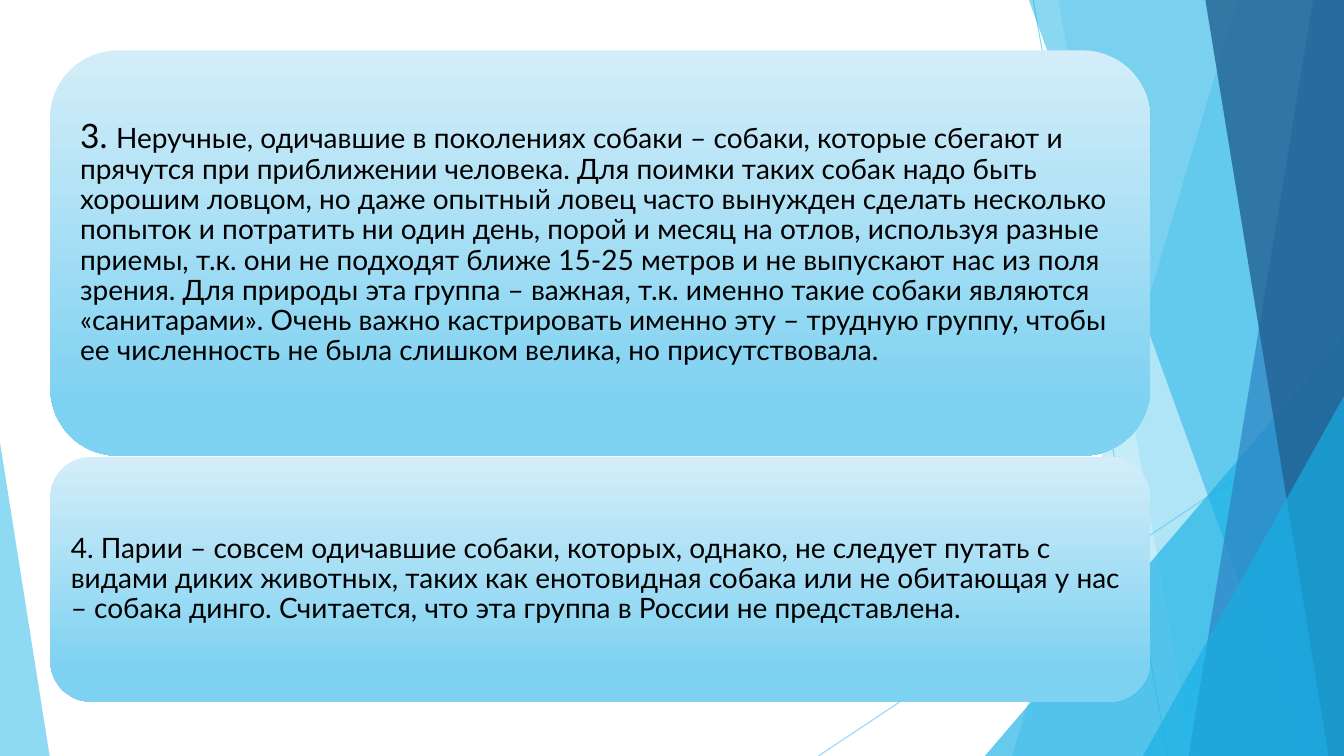
"""Build a slide with two gradient text cards over a faceted blue backdrop."""
import pptx
import pptx.dml.color
import pptx.enum.shapes
import pptx.enum.text
import pptx.oxml.ns
import pptx.oxml.xmlchemy
import pptx.util

Pt = pptx.util.Pt
RGB = pptx.dml.color.RGBColor
KIND = pptx.enum.shapes.MSO_SHAPE

SKY = RGB(0x5F, 0xCB, 0xEF)
CYAN = RGB(0x17, 0xB0, 0xE4)
BLUE = RGB(0x2E, 0x83, 0xC3)
NAVY = RGB(0x22, 0x62, 0x92)
PALE = RGB(0xD4, 0xEE, 0xF9)
SOFT = RGB(0x7D, 0xD1, 0xF1)
BLACK = RGB(0, 0, 0)
WIDE, HIGH = 960, 540

FERAL = (
    "Неручные, одичавшие в поколениях собаки – собаки, которые сбегают и "
    "прячутся при приближении человека. Для поимки таких собак надо быть "
    "хорошим ловцом, но даже опытный ловец часто вынужден сделать несколько "
    "попыток и потратить ни один день, порой и месяц на отлов, используя разные "
    "приемы, т.к. они не подходят ближе 15-25 метров и не выпускают нас из поля "
    "зрения. Для природы эта группа – важная, т.к. именно такие собаки являются "
    "«санитарами». Очень важно кастрировать именно эту – трудную группу, чтобы "
    "ее численность не была слишком велика, но присутствовала."
)
PARIAH = (
    "4. Парии – совсем одичавшие собаки, которых, однако, не следует путать с "
    "видами диких животных, таких как енотовидная собака или не обитающая у нас "
    "– собака динго. Считается, что эта группа в России не представлена."
)


class Deck:
    """Hold the style and the current slide."""

    font = "Lato"

    def __init__(self, slide):
        self.shapes = slide.shapes

    def fade(self, shape, alpha):
        """Set the opacity of a shape's colour in percent."""
        for color in shape.element.iter(pptx.oxml.ns.qn("a:srgbClr")):
            node = pptx.oxml.xmlchemy.OxmlElement("a:alpha")
            node.set("val", str(alpha * 1000))
            color.append(node)

    def paint(self, shape, color, alpha):
        """Fill a shape with a translucent colour and no outline."""
        shape.shadow.inherit = False
        shape.fill.solid()
        shape.fill.fore_color.rgb = color
        shape.line.fill.background()
        self.fade(shape, alpha)

    def line(self, x1, y1, x2, y2):
        """Draw a thin translucent line."""
        kind = pptx.enum.shapes.MSO_CONNECTOR.STRAIGHT
        line = self.shapes.add_connector(kind, Pt(x1), Pt(y1), Pt(x2), Pt(y2))
        line.line.color.rgb = SKY
        line.line.width = Pt(0.75)
        self.fade(line, 70)
        line.element.spPr.append(pptx.oxml.xmlchemy.OxmlElement("a:effectLst"))

    def facet(self, top, base, color, alpha):
        """Fill from a slanted edge to the right side of the slide."""
        form = self.shapes.build_freeform(top, 0, scale=Pt(1))
        form.add_line_segments([(WIDE, 0), (WIDE, HIGH), (base, HIGH)])
        self.paint(form.convert_to_shape(), color, alpha)

    def wedge(self, left, top, width, apex, color, alpha):
        """Draw a triangle that stands on the bottom edge."""
        shape = self.shapes.add_shape(
            KIND.ISOSCELES_TRIANGLE, Pt(left), Pt(top), Pt(width), Pt(HIGH - top))
        shape.adjustments[0] = apex
        self.paint(shape, color, alpha)

    def card(self, top, height, inset, base, runs):
        """Draw a rounded gradient card with (text, size) runs."""
        shape = self.shapes.add_shape(
            KIND.ROUNDED_RECTANGLE, Pt(36), Pt(top), Pt(785.5), Pt(height))
        shape.shadow.inherit = False
        shape.line.fill.background()
        shape.fill.gradient()
        shape.fill.gradient_angle = 270
        for stop, spot, color in zip(
                shape.fill.gradient_stops, (0, 0.88), (PALE, SOFT)):
            stop.position = spot
            stop.color.rgb = color
        frame = shape.text_frame
        frame.word_wrap = True
        frame.vertical_anchor = pptx.enum.text.MSO_ANCHOR.MIDDLE
        frame.margin_left = frame.margin_right = frame.margin_top = Pt(inset)
        frame.margin_bottom = Pt(base)
        para = frame.paragraphs[0]
        para.alignment = pptx.enum.text.PP_ALIGN.LEFT
        para.line_spacing = 0.9
        para.font.name = self.font
        para.font.color.rgb = BLACK
        for text, size in runs:
            run = para.add_run()
            run.text = text
            run.font.size = Pt(size)


def main():
    """Build and save the slide."""
    show = pptx.Presentation()
    show.slide_width, show.slide_height = Pt(WIDE), Pt(HIGH)
    deck = Deck(show.slides.add_slide(show.slide_layouts[6]))
    deck.line(738, 0, 834, HIGH)
    deck.line(WIDE, 290, 584.6, HIGH)
    deck.facet(884, 723, SKY, 36)
    deck.facet(756, 852, SKY, 20)
    deck.wedge(703.5, 240, 256.5, 1, CYAN, 66)
    deck.facet(735, 930, CYAN, 50)
    deck.facet(938, 849, BLUE, 70)
    deck.facet(861, 949, NAVY, 80)
    deck.wedge(816.5, 283, 143.5, 1, CYAN, 66)
    deck.wedge(0, 316, 35.5, 0, SKY, 70)
    deck.card(36, 289.5, 7.2, 21.6, [("3. ", 24), (FERAL, 20)])
    deck.card(326.2, 175, 6, 6, [(PARIAH, 20)])
    show.save("out.pptx")


if __name__ == "__main__":
    main()
